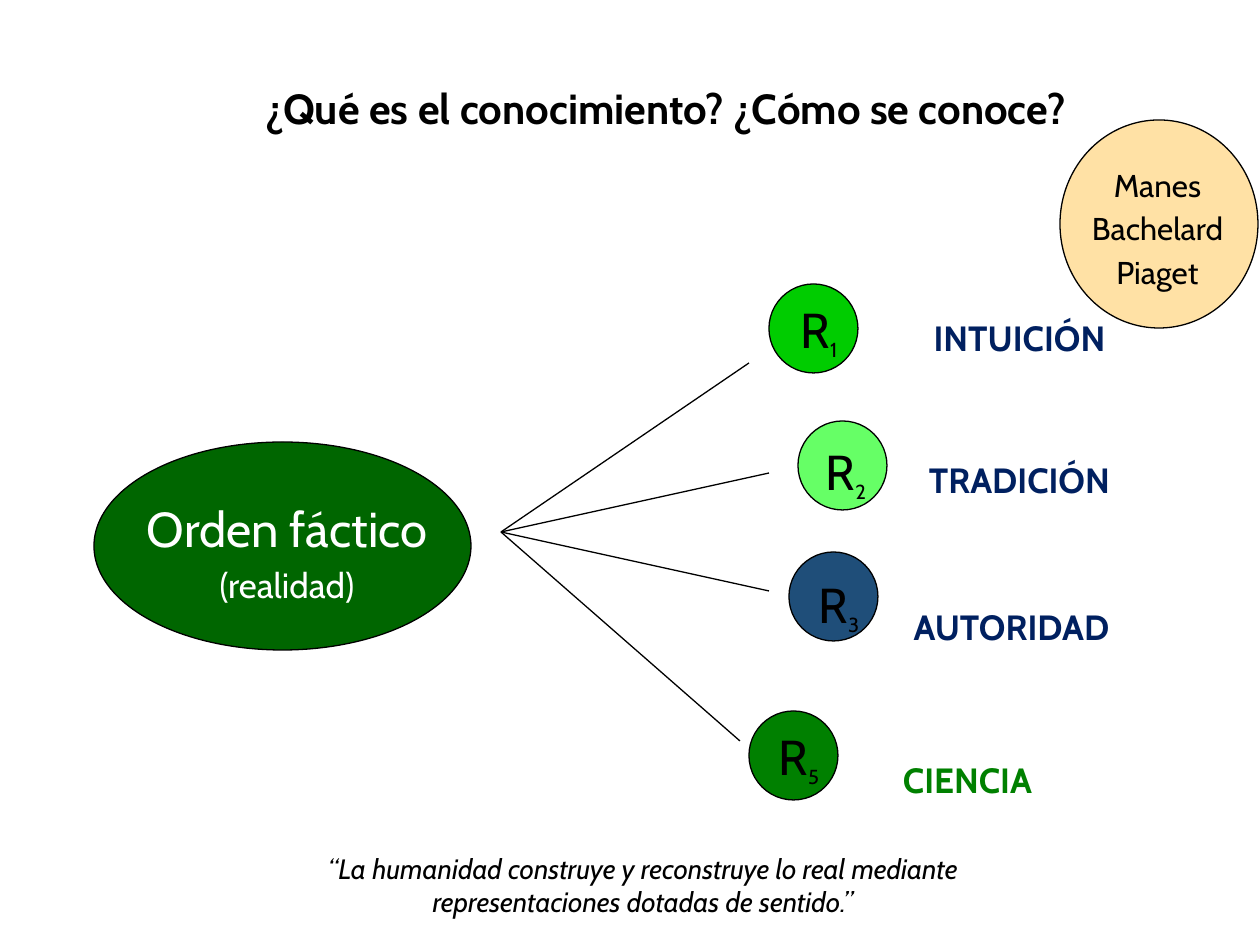
from dataclasses import dataclass

from lxml.etree import SubElement
from pptx import Presentation
from pptx.dml.color import RGBColor
from pptx.enum.shapes import MSO_CONNECTOR as Connector, MSO_SHAPE as Shape
from pptx.enum.text import MSO_ANCHOR as Anchor, MSO_AUTO_SIZE as AutoSize, PP_ALIGN as Align
from pptx.oxml.ns import qn
from pptx.util import Emu, Pt


@dataclass(frozen=True)
class Theme:
    font: str = "Cabin"
    black: str = "000000"
    white: str = "FFFFFF"
    navy: str = "002060"
    science: str = "008000"
    reality: str = "006600"
    authors: str = "FFCC66"
    title_size: int = 24
    symbol_size: int = 28
    label_size: int = 20
    author_size: int = 18
    quote_size: int = 16
    outline: float = 0.75
    spacing: float = 1.15


THEME = Theme()
PX = 914400 / 126
PAGE_SIZE = (1260, 945)

TITLE = "¿Qué es el conocimiento? ¿Cómo se conoce?"
QUOTE = ("“La humanidad construye y reconstruye lo real mediante "
         "representaciones dotadas de sentido.”")
REALITY = [("Orden fáctico", THEME.symbol_size), ("(realidad)", THEME.label_size)]
AUTHORS = [(name, THEME.author_size) for name in ("Manes", "Bachelard", "Piaget")]

# index, circle corner, circle fill, symbol corner, ray end, label, label corner, label colour
REPRESENTATIONS = [
    ("1", (769, 284), "00CC00", (769, 284), (749, 363),
     "INTUICIÓN", (643, 304), THEME.navy),
    ("2", (798, 421), "66FF66", (796, 426), (769, 473),
     "TRADICIÓN", (643, 446), THEME.navy),
    ("3", (789, 552), "1F4E79", (789, 559), (769, 591),
     "AUTORIDAD", (635, 593), THEME.navy),
    ("5", (749, 711), THEME.science, (749, 711), (740, 741),
     "CIENCIA", (591, 746), THEME.science),
]
RAY_START = (501, 532)
CIRCLE_SIZE = (89, 89)
SYMBOL_SIZE = (100, 75)
LABEL_SIZE = (753, 57)


def emu(*pixels):
    return [Emu(round(value * PX)) for value in pixels]


def style_span(span, size, color, bold=False, italic=False):
    font = span.font
    font.name, font.size = THEME.font, Pt(size)
    font.bold, font.italic = bold, italic
    font.color.rgb = RGBColor.from_string(color)


def add_text(page, corner, size, lines, color, spacing=THEME.spacing, **style):
    """Add a centred text box from (text, size) lines and return its paragraphs."""
    frame = page.shapes.add_textbox(*emu(*corner, *size)).text_frame
    frame.word_wrap = True
    frame.text = "\n".join(text for text, _ in lines)
    for para, (_, points) in zip(frame.paragraphs, lines):
        para.alignment = Align.CENTER
        para.line_spacing = spacing
        style_span(para.runs[0], points, color, **style)
    return frame.paragraphs


def add_ellipse(page, corner, size, fill, opacity=None):
    ellipse = page.shapes.add_shape(Shape.OVAL, *emu(*corner, *size))
    ellipse.shadow.inherit = False
    ellipse.fill.solid()
    ellipse.fill.fore_color.rgb = RGBColor.from_string(fill)
    ellipse.line.color.rgb = RGBColor.from_string(THEME.black)
    ellipse.line.width = Pt(THEME.outline)
    if opacity is not None:
        color = ellipse.fill._xPr.find(qn("a:solidFill"))[0]
        SubElement(color, qn("a:alpha")).set("val", str(opacity * 1000))


def add_symbol(page, corner, index):
    para = add_text(page, corner, SYMBOL_SIZE, [("R", THEME.symbol_size)], THEME.black)[0]
    subscript = para.add_run()
    subscript.text = index
    style_span(subscript, THEME.label_size, THEME.black)
    subscript.font._element.set("baseline", "-25000")


def add_ray(page, end):
    ray = page.shapes.add_connector(Connector.STRAIGHT, *emu(*RAY_START, *end))
    ray.line.color.rgb = RGBColor.from_string(THEME.black)
    ray.line.width = Pt(THEME.outline)
    SubElement(ray._element.spPr, qn("a:effectLst"))


def set_title(page):
    title = page.shapes.title
    title.left, title.top, title.width, title.height = emu(184, 76, 963, 140)
    frame = title.text_frame
    frame.text = TITLE
    frame.word_wrap = True
    frame.auto_size = AutoSize.NONE
    frame.vertical_anchor = Anchor.TOP
    para = frame.paragraphs[0]
    para.alignment = Align.CENTER
    style_span(para.runs[0], THEME.title_size, THEME.black, bold=True)


def main():
    deck = Presentation()
    deck.slide_width, deck.slide_height = emu(*PAGE_SIZE)
    page = deck.slides.add_slide(deck.slide_layouts[5])
    set_title(page)

    add_ellipse(page, (94, 442), (377, 208), THEME.reality)
    add_text(page, (113, 483), (348, 130), REALITY, THEME.white)

    for index, circle, fill, symbol, ray_end, label, label_corner, color in REPRESENTATIONS:
        add_ellipse(page, circle, CIRCLE_SIZE, fill)
        add_symbol(page, symbol, index)
        add_ray(page, ray_end)
        add_text(page, label_corner, LABEL_SIZE, [(label, THEME.label_size)], color, bold=True)

    add_text(page, (231, 845), (824, 131), [(QUOTE, THEME.quote_size)], THEME.black,
             spacing=1.0, italic=True)
    add_ellipse(page, (1060, 120), (198, 208), THEME.authors, opacity=59)
    add_text(page, (1024, 154), (267, 140), AUTHORS, THEME.black)
    deck.save("out.pptx")


if __name__ == "__main__":
    main()
